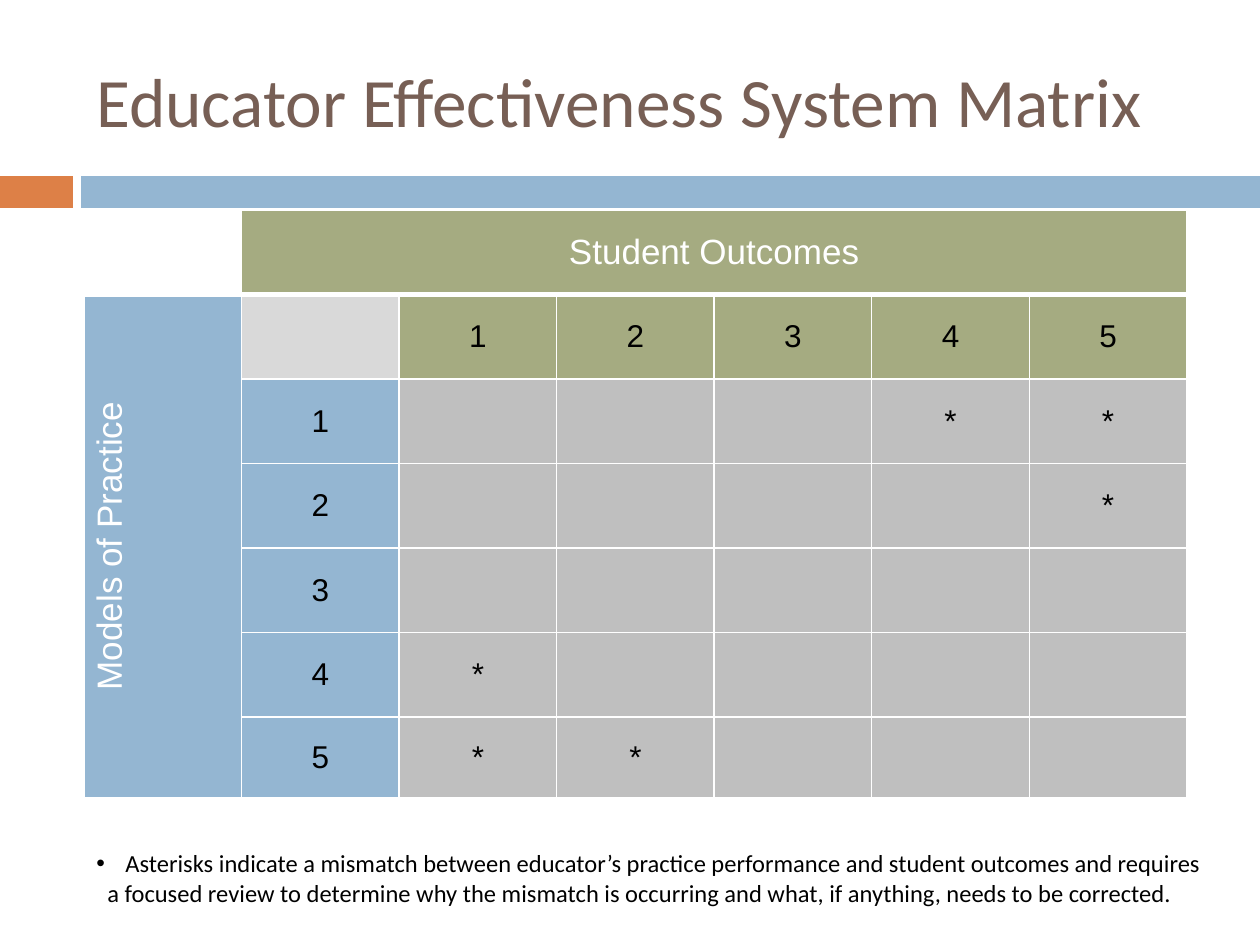
from lxml import etree
from pptx import Presentation, util as u
from pptx.dml.color import RGBColor
from pptx.enum import shapes, text
from pptx.oxml.ns import qn

PX = 914400 // 126
COLORS = {
    "white": "FFFFFF", "black": "000000", "brown": "775F55", "orange": "DD8047",
    "blue": "94B6D2", "green": "A5AB81", "light": "D9D9D9", "gray": "BFBFBF",
}
TITLE = "Educator Effectiveness System Matrix"
OUTCOMES, PRACTICE = "Student Outcomes", "Models of Practice"
LEVELS = ["1", "2", "3", "4", "5"]
MISMATCHES = {("1", "4"), ("1", "5"), ("2", "5"), ("4", "1"), ("5", "1"), ("5", "2")}
# text, left margin, first-line indent, bullet
NOTE = [
    ("Asterisks indicate a mismatch between educator’s practice performance "
     "and student outcomes and requires", 29, -29, "•"),
    ("a focused review to determine why the mismatch is occurring and what, "
     "if anything, needs to be corrected.", 11, 0, None),
]
# left, top, width, height, colour
BANDS = [
    (0, 176, 73, 32, "orange"),
    (81, 176, 1179, 32, "blue"),
    (0, 804, 224, 141, "white"),
]
TABLE = (84, 210, 1103, 588)
LAST_ROW = 81


def px(*lengths):
    return [u.Emu(length * PX) for length in lengths]


def rgb(color):
    return RGBColor.from_string(COLORS[color])


def add_run(paragraph, words, size, font, color):
    run = paragraph.add_run()
    run.text = words
    run.font.size = u.Pt(size)
    run.font.name = font
    run.font.color.rgb = rgb(color)


def add_box(slide, left, top, width, height, color):
    box = slide.shapes.add_shape(
        shapes.MSO_SHAPE.RECTANGLE, *px(left, top, width, height))
    box.shadow.inherit = False
    box.fill.solid()
    box.fill.fore_color.rgb = rgb(color)
    box.line.fill.background()
    return box


def add_borders(cell, header):
    """White cell edges, thicker under the header row."""
    props = cell._tc.get_or_add_tcPr()
    for place, side in enumerate(("lnL", "lnR", "lnT", "lnB")):
        thick = header and side == "lnB"
        edge = etree.Element(qn("a:" + side), w=str(u.Pt(3 if thick else 1)))
        fill = etree.SubElement(edge, qn("a:solidFill"))
        etree.SubElement(fill, qn("a:srgbClr"), val=COLORS["white"])
        props.insert(place, edge)


def matrix_cell(row, column):
    """Words, size, text colour and fill of one cell."""
    if row == 0:
        return (OUTCOMES if column == 1 else "", 20, "white",
                "green" if column else "white")
    if column == 0:
        return PRACTICE if row == 1 else "", 20, "white", "blue"
    if row == 1:
        if column == 1:
            return "", 18, "black", "light"
        return LEVELS[column - 2], 18, "black", "green"
    if column == 1:
        return LEVELS[row - 2], 18, "black", "blue"
    mismatch = (LEVELS[row - 2], LEVELS[column - 2]) in MISMATCHES
    return "*" if mismatch else "", 18, "black", "gray"


def add_matrix(slide):
    count = len(LEVELS) + 2
    table = slide.shapes.add_table(count, count, *px(*TABLE)).table
    for column in table.columns:
        column.width = u.Emu(TABLE[2] * PX // count)
    for row in table.rows:
        row.height = u.Emu((TABLE[3] - LAST_ROW) * PX // (count - 1))
    table.rows[count - 1].height = px(LAST_ROW)[0]

    for row in range(count):
        for column in range(count):
            words, size, color, fill = matrix_cell(row, column)
            cell = table.cell(row, column)
            cell.fill.solid()
            cell.fill.fore_color.rgb = rgb(fill)
            cell.vertical_anchor = text.MSO_ANCHOR.MIDDLE
            add_borders(cell, row == 0)
            if words:
                paragraph = cell.text_frame.paragraphs[0]
                paragraph.alignment = text.PP_ALIGN.CENTER
                add_run(paragraph, words, size, "Arial", color)

    table.cell(0, 1).merge(table.cell(0, count - 1))
    table.cell(1, 0).merge(table.cell(count - 1, 0))
    table.cell(1, 0)._tc.get_or_add_tcPr().set("vert", "vert270")


def add_title(slide):
    frame = slide.shapes.add_textbox(*px(84, 32, 1124, 136)).text_frame
    frame.word_wrap = True
    frame.vertical_anchor = text.MSO_ANCHOR.MIDDLE
    add_run(frame.paragraphs[0], TITLE, 39.6, "Calibri", "brown")


def add_note(slide):
    frame = add_box(slide, 84, 842, 1134, 72, "white").text_frame
    frame.word_wrap = True
    frame.vertical_anchor = text.MSO_ANCHOR.TOP
    for index, (words, margin, indent, bullet) in enumerate(NOTE):
        paragraph = frame.add_paragraph() if index else frame.paragraphs[0]
        paragraph.alignment = text.PP_ALIGN.LEFT
        props = paragraph._p.get_or_add_pPr()
        props.set("marL", str(margin * PX))
        props.set("indent", str(indent * PX))
        if bullet:
            etree.SubElement(props, qn("a:buFont"), typeface="Arial")
            etree.SubElement(props, qn("a:buChar"), char=bullet)
        add_run(paragraph, words, 14, "Calibri", "black")


def main():
    deck = Presentation()
    deck.slide_width, deck.slide_height = px(1260, 945)
    slide = deck.slides.add_slide(deck.slide_layouts[6])
    for band in BANDS:
        add_box(slide, *band)
    add_matrix(slide)
    add_note(slide)
    add_title(slide)
    deck.save("out.pptx")


if __name__ == "__main__":
    main()
